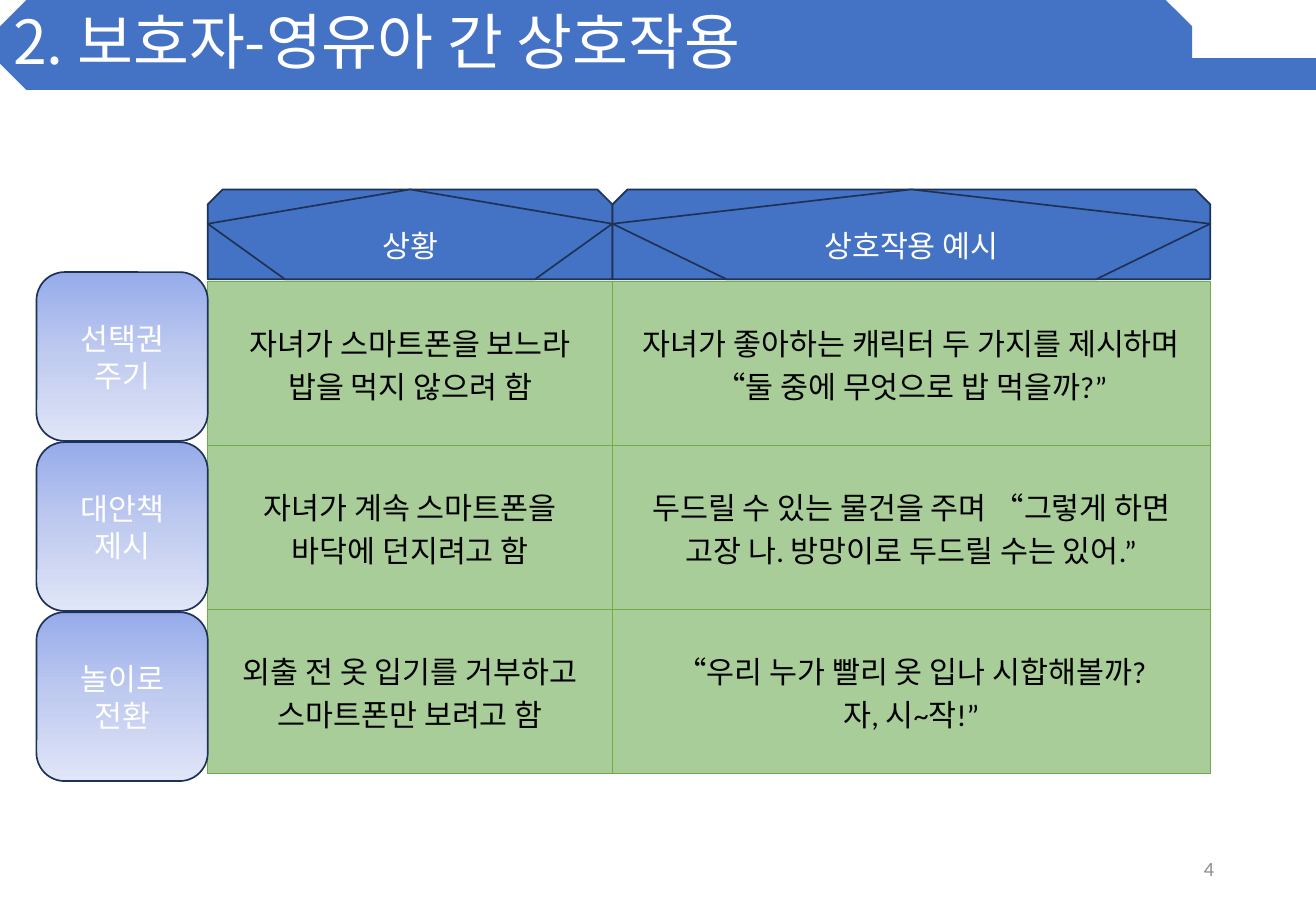
from lxml import etree
from pptx import Presentation
from pptx.dml.color import RGBColor
from pptx.enum.shapes import MSO_SHAPE as Shape
from pptx.enum.text import MSO_ANCHOR as Anchor, PP_ALIGN as Align
from pptx.oxml import parse_xml
from pptx.oxml.ns import nsdecls, qn
from pptx.util import Inches, Pt

TITLE = "2. 보호자-영유아 간 상호작용"
PAGE_NUMBER = "4"
HEADERS = ["상황", "상호작용 예시"]
ROWS = [
    ("선택권 주기",
     ["자녀가 스마트폰을 보느라 밥을 먹지 않으려 함"],
     ["자녀가 좋아하는 캐릭터 두 가지를 제시하며 “둘 중에 무엇으로 밥 먹을까?”"]),
    ("대안책 제시",
     ["자녀가 계속 스마트폰을 바닥에 던지려고 함"],
     ["두드릴 수 있는 물건을 주며 “그렇게 하면 고장 나. 방망이로 두드릴 수는 있어.”"]),
    ("놀이로 전환",
     ["외출 전 옷 입기를 거부하고 스마트폰만 보려고 함"],
     ["“우리 누가 빨리 옷 입나 시합해볼까?", "자, 시~작!”"]),
]

BLUE = RGBColor(0x44, 0x72, 0xC4)
NAVY = RGBColor(0x1E, 0x32, 0x56)
CELL_GREEN = RGBColor(0xA9, 0xCD, 0x98)
BORDER_GREEN = RGBColor(0x70, 0xAD, 0x47)
WHITE = RGBColor(0xFF, 0xFF, 0xFF)
BLACK = RGBColor(0, 0, 0)
GRAY = RGBColor(0x8C, 0x8C, 0x8C)
LABEL_STOPS = [(0, RGBColor(0x96, 0xAB, 0xEA)),
               (50, RGBColor(0xC0, 0xCB, 0xF0)),
               (100, RGBColor(0xE0, 0xE5, 0xF7))]
KOREAN, LATIN = "Noto Sans CJK KR", "Calibri"

TABLE_LEFT, TABLE_TOP = 1.71, 2.32
COLUMN_WIDTHS = [3.33, 4.92]
ROW_HEIGHT = 1.35
HEADER_TOP, HEADER_HEIGHT = 1.56, 0.74
LABEL_LEFT, LABEL_TOP = 0.3, 2.24
LABEL_WIDTH, LABEL_HEIGHT, LABEL_PITCH = 1.41, 1.39, 1.4


def write(frame, lines, size, color, font=KOREAN, align=Align.CENTER, spacing=None):
    frame.word_wrap = True
    for index, line in enumerate(lines):
        para = frame.paragraphs[0] if index == 0 else frame.add_paragraph()
        para.alignment = align
        if spacing:
            para.line_spacing = spacing
        span = para.add_run()
        span.text = line
        span.font.size = Pt(size)
        span.font.name = font
        span.font.color.rgb = color
        east_asian = etree.SubElement(span.font._element, qn("a:ea"))
        east_asian.set("typeface", KOREAN)


def add_text(page, place, line, size, color, **style):
    box = page.shapes.add_textbox(*map(Inches, place))
    box.text_frame.vertical_anchor = Anchor.MIDDLE
    write(box.text_frame, [line], size, color, **style)


def add_block(page, kind, place, outlined=True):
    block = page.shapes.add_shape(kind, *map(Inches, place))
    block.shadow.inherit = False
    block.fill.solid()
    block.fill.fore_color.rgb = BLUE
    if outlined:
        block.line.color.rgb = NAVY
        block.line.width = Pt(1)
    else:
        block.line.fill.background()
    block.text_frame.vertical_anchor = Anchor.MIDDLE
    return block


def set_gradient(block):
    stops = "".join(
        f'<a:gs pos="{percent * 1000}"><a:srgbClr val="{color}"/></a:gs>'
        for percent, color in LABEL_STOPS)
    gradient = parse_xml(
        f'<a:gradFill {nsdecls("a")} rotWithShape="1"><a:gsLst>{stops}</a:gsLst>'
        '<a:lin ang="5400000" scaled="0"/></a:gradFill>')
    solid = block._element.spPr.find(qn("a:solidFill"))
    solid.getparent().replace(solid, gradient)


def set_borders(cell):
    properties = cell._tc.get_or_add_tcPr()
    for index, side in enumerate(["lnL", "lnR", "lnT", "lnB"]):
        properties.insert(index, parse_xml(
            f'<a:{side} {nsdecls("a")} w="{Pt(0.5)}"><a:solidFill>'
            f'<a:srgbClr val="{BORDER_GREEN}"/></a:solidFill></a:{side}>'))


def add_title(page):
    add_block(page, Shape.OCTAGON, (0, 0, 9.81, 0.74), outlined=False)
    add_block(page, Shape.RECTANGLE, (1.67, 0.48, 9.16, 0.26), outlined=False)
    add_text(page, (0.01, 0, 7.64, 0.74), TITLE, 36, WHITE,
             align=Align.LEFT, spacing=0.9)


def add_situations(page):
    place = (TABLE_LEFT, TABLE_TOP, sum(COLUMN_WIDTHS), ROW_HEIGHT * len(ROWS))
    table = page.shapes.add_table(
        len(ROWS), len(COLUMN_WIDTHS), *map(Inches, place)).table
    table.first_row = False
    table.horz_banding = False
    for column, width in zip(table.columns, COLUMN_WIDTHS):
        column.width = Inches(width)
    for row, (_, *texts) in zip(table.rows, ROWS):
        row.height = Inches(ROW_HEIGHT)
        for cell, lines in zip(row.cells, texts):
            cell.vertical_anchor = Anchor.MIDDLE
            cell.fill.solid()
            cell.fill.fore_color.rgb = CELL_GREEN
            set_borders(cell)
            write(cell.text_frame, lines, 18, BLACK, font=LATIN, spacing=Pt(26))


def add_headers(page):
    left = TABLE_LEFT
    for header, width in zip(HEADERS, COLUMN_WIDTHS):
        place = (left, HEADER_TOP, width, HEADER_HEIGHT)
        add_block(page, Shape.SNIP_2_SAME_RECTANGLE, place)
        roof = add_block(page, Shape.REGULAR_PENTAGON, place)
        write(roof.text_frame, [header], 18, WHITE)
        left += width


def add_labels(page):
    for index, (label, *_) in enumerate(ROWS):
        top = LABEL_TOP + index * LABEL_PITCH
        block = add_block(page, Shape.ROUNDED_RECTANGLE,
                          (LABEL_LEFT, top, LABEL_WIDTH, LABEL_HEIGHT))
        set_gradient(block)
        write(block.text_frame, [label], 18, WHITE, spacing=Pt(22))


def main():
    deck = Presentation()
    deck.slide_width, deck.slide_height = Inches(10.83), Inches(7.5)
    page = deck.slides.add_slide(deck.slide_layouts[6])
    add_title(page)
    add_text(page, (7.65, 6.95, 2.44, 0.4), PAGE_NUMBER, 12, GRAY,
             font=LATIN, align=Align.RIGHT)
    add_situations(page)
    add_headers(page)
    add_labels(page)
    deck.save("out.pptx")


if __name__ == "__main__":
    main()
